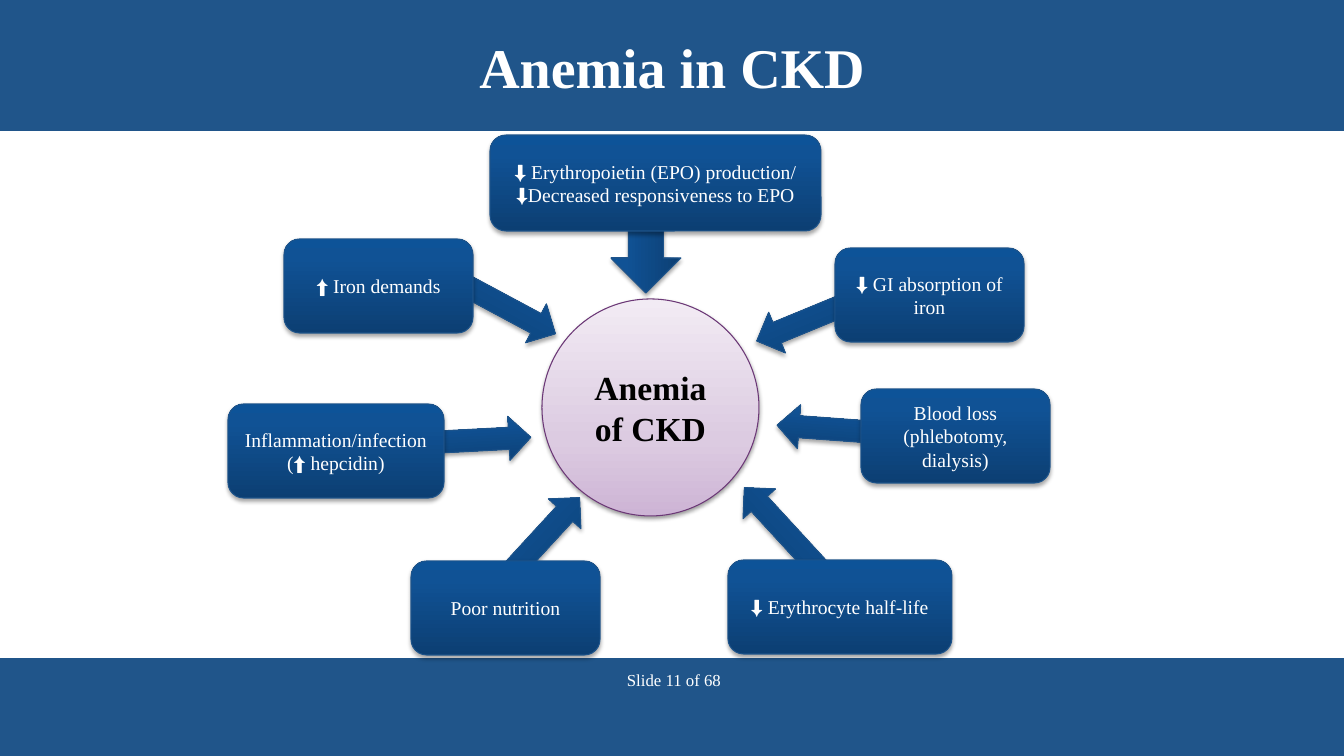
from copy import deepcopy

from lxml import etree
from pptx import Presentation
from pptx.dml.color import RGBColor
from pptx.enum.shapes import MSO_SHAPE as SHAPE
from pptx.enum.text import MSO_ANCHOR as ANCHOR, MSO_AUTO_SIZE as AUTO_SIZE, PP_ALIGN as ALIGN
from pptx.oxml.ns import qn
from pptx.util import Pt

PX = 914400 / 100.8
THEME = {
    "font": "Times New Roman",
    "band": "20558A",
    "light": "FFFFFF",
    "dark": "000000",
    "cause": {"stops": [(0, "0C3F73"), (0.8, "105295"), (1, "0D5398")],
              "line": "1D538A", "shadow": (35, 1.8)},
    "hub": {"stops": [(0, "CDB4D5"), (0.35, "DCCBE1"), (1, "F2EBF4")],
            "line": "6B3776", "shadow": (38, 1.6)},
    "title_size": 40, "hub_size": 24, "cause_size": 14, "footer_size": 12,
}


def write(frame, text, size, color, bold=False, align=ALIGN.CENTER):
    frame.text = text
    frame.vertical_anchor = ANCHOR.MIDDLE
    for paragraph in frame.paragraphs:
        paragraph.alignment = align
        font_format = {"name": THEME["font"], "size": Pt(size), "bold": bold}
        for key, value in font_format.items():
            setattr(paragraph.font, key, value)
            setattr(paragraph.runs[0].font, key, value)
        paragraph.runs[0].font.color.rgb = RGBColor.from_string(color)


def add_glossy(kind, box, style):
    """Add a shape with an upward three-stop gradient, thin outline and soft shadow."""
    shape = slide.shapes.add_shape(kind, *[round(v * PX) for v in box])
    shape.fill.gradient()
    shape.fill.gradient_angle = 90
    stop_list = shape._element.spPr.find(".//" + qn("a:gsLst"))
    stop_list.append(deepcopy(stop_list[0]))
    for stop, (position, color) in zip(shape.fill.gradient_stops, style["stops"]):
        stop.position = position
        stop.color.rgb = RGBColor.from_string(color)
    shape.line.color.rgb = RGBColor.from_string(style["line"])
    shape.line.width = Pt(0.75)
    shape.shadow.inherit = False
    opacity, distance = style["shadow"]
    effects = shape._element.spPr.find(qn("a:effectLst"))
    shadow = etree.SubElement(effects, qn("a:outerShdw"), blurRad=str(Pt(3.1)),
                              dist=str(Pt(distance)), dir="5400000", rotWithShape="0")
    tone = etree.SubElement(shadow, qn("a:srgbClr"), val=THEME["dark"])
    etree.SubElement(tone, qn("a:alpha"), val=str(opacity * 1000))
    return shape


deck = Presentation()
deck.slide_width, deck.slide_height = round(1344 * PX), round(756 * PX)
slide = deck.slides.add_slide(deck.slide_layouts[5])

# Header and footer bands lie behind the title
for top, height in [(0, 131), (658, 98)]:
    band = slide.shapes.add_shape(SHAPE.RECTANGLE, 0, round(top * PX),
                                  deck.slide_width, round(height * PX))
    band.fill.solid()
    band.fill.fore_color.rgb = RGBColor.from_string(THEME["band"])
    band.line.fill.background()
    band.shadow.inherit = False
    slide.shapes._spTree.insert(2, band._element)

title = slide.shapes.title
title_place = {"left": 0, "top": 0, "width": deck.slide_width, "height": round(132 * PX)}
for key, value in title_place.items():
    setattr(title, key, value)
write(title.text_frame, "Anemia in CKD", THEME["title_size"], THEME["light"], bold=True)

page_note = slide.shapes.add_textbox(*[round(v * PX) for v in (617, 665, 128, 30)])
write(page_note.text_frame, "Slide 11 of 68", THEME["footer_size"], THEME["light"],
      align=ALIGN.LEFT)
page_note.text_frame.word_wrap = True
page_note.text_frame.vertical_anchor = ANCHOR.TOP
page_note.text_frame.auto_size = AUTO_SIZE.SHAPE_TO_FIT_TEXT

hub = add_glossy(SHAPE.FLOWCHART_CONNECTOR, (542, 299, 217, 217), THEME["hub"])
write(hub.text_frame, "Anemia of CKD", THEME["hub_size"], THEME["dark"], bold=True)

# Cause, its box, its arrow, arrow rotation, arrow mirrored
causes = [
    ("⬇ Erythropoietin (EPO) production/ ⬇Decreased responsiveness to EPO",
     (490, 135, 331, 96), (583, 195, 126, 70), 270, False),
    ("⬇ GI absorption of iron", (835, 248, 189, 94), (752, 295, 126, 44), 337.6, False),
    ("Poor nutrition", (411, 561, 189, 94), (474, 522, 126, 44), 312.6, True),
    ("Blood loss\n(phlebotomy, dialysis)",
     (861, 389, 189, 94), (777, 407, 105, 44), 4.2, False),
    ("Inflammation/infection\n(⬆ hepcidin)",
     (228, 404, 216, 94), (387, 419, 144, 44), 357, True),
    ("⬇ Erythrocyte half-life", (728, 560, 224, 94), (724, 512, 126, 44), 47.4, False),
    ("⬆ Iron demands", (284, 239, 189, 94), (437, 282, 126, 44), 28.2, True),
]
for cause, cause_box, arrow_box, rotation, mirrored in causes:
    arrow = add_glossy(SHAPE.LEFT_ARROW, arrow_box, THEME["cause"])
    arrow.rotation = rotation
    if mirrored:
        arrow._element.spPr.find(qn("a:xfrm")).set("flipH", "1")
    card = add_glossy(SHAPE.FLOWCHART_ALTERNATE_PROCESS, cause_box, THEME["cause"])
    write(card.text_frame, cause, THEME["cause_size"], THEME["light"])

deck.save("out.pptx")
